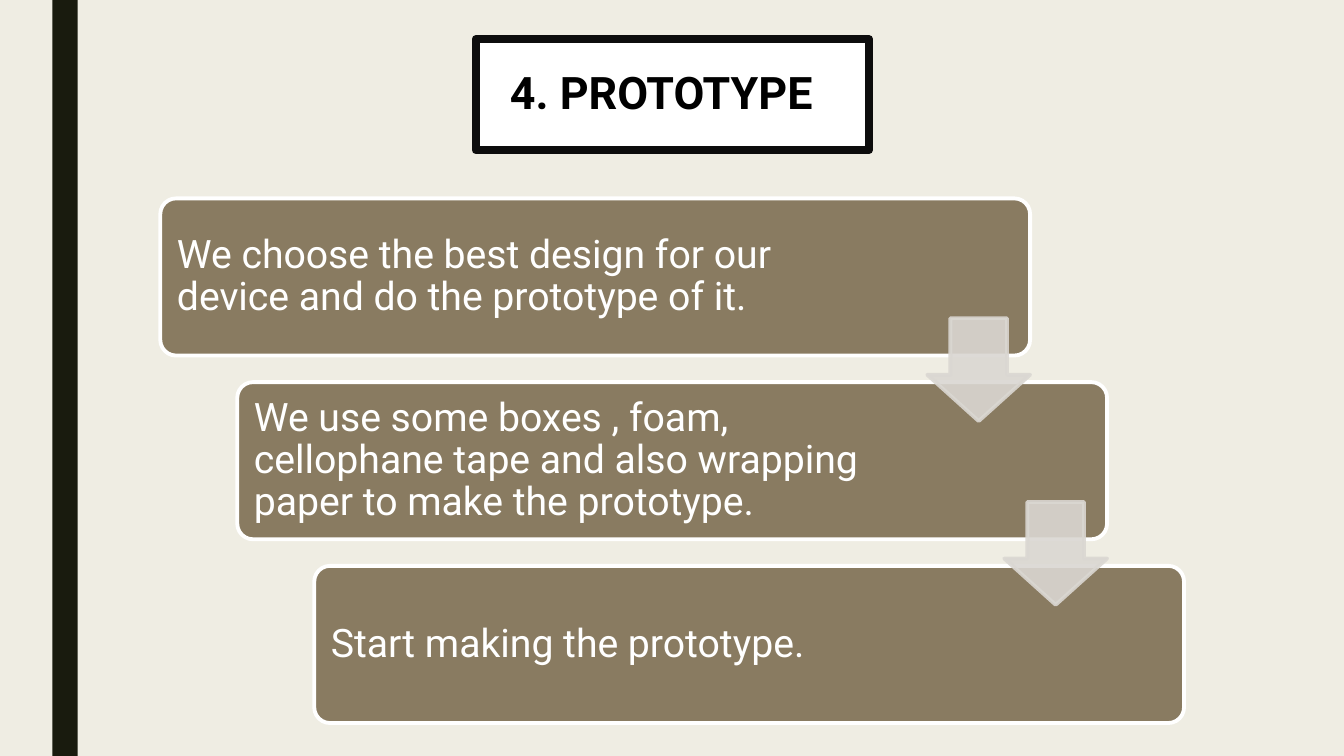
"""Build the prototype slide: a title box above three stepped boxes joined by arrows."""
from dataclasses import dataclass

from pptx import Presentation
from pptx.dml.color import RGBColor as Rgb
from pptx.enum.shapes import MSO_SHAPE as Kind
from pptx.enum.text import MSO_ANCHOR as Anchor, MSO_AUTO_SIZE as Fit, PP_ALIGN as Align
from pptx.oxml.ns import qn
from pptx.oxml.xmlchemy import OxmlElement as Element
from pptx.shapes.autoshape import Shape
from pptx.slide import Slide
from pptx.text.text import TextFrame
from pptx.util import Cm, Pt


@dataclass(frozen=True)
class Theme:
    """Colours, font and sizes of the slide."""
    paper: str = "EFEDE3"
    bar: str = "191B0E"
    ink: str = "000000"
    frame: str = "0D0D0D"
    white: str = "FFFFFF"
    box: str = "897B61"
    arrow: str = "DAD7D2"
    font: str = "Roboto"
    title: float = 32
    body: float = 28
    thick: float = 6
    thin: float = 2.75


@dataclass(frozen=True)
class Area:
    """Place and size in centimetres."""
    left: float
    top: float
    width: float
    height: float

    def shift(self, steps: int) -> "Area":
        """Move the area down the stairs."""
        return Area(self.left + steps * STEP_X, self.top + steps * STEP_Y,
                    self.width, self.height)

    def spans(self) -> tuple[Cm, Cm, Cm, Cm]:
        """Give the four lengths for a new shape."""
        return Cm(self.left), Cm(self.top), Cm(self.width), Cm(self.height)


@dataclass(frozen=True)
class Step:
    """One box of the stairs."""
    text: str
    width: float


THEME = Theme()
STEP_X, STEP_Y = 1.94, 4.63
PAGE = Area(0, 0, 33.87, 19.05)
BAR = Area(1.32, 0, 0.64, PAGE.height)
TITLE = Area(11.99, 0.99, 9.91, 2.79)
BOX = Area(4.04, 5, 21.92, 3.96)
ARROW = Area(23.37, 8.02, 2.59, 2.59)
EDGE = 0.12
PAD = 0.3
STEPS = [
    Step("We choose the best design for our device and do the prototype of it.", 17.63),
    Step("We use some boxes , foam, cellophane tape and also wrapping paper "
         "to make the prototype.", 17.17),
    Step("Start making the prototype.", 17.17),
]


def paint(shape: Shape, fill: str, line: str | None = None, width: float = 0) -> None:
    """Set the fill and the outline."""
    shape.fill.solid()
    shape.fill.fore_color.rgb = Rgb.from_string(fill)
    if line is None:
        shape.line.fill.background()
        return
    shape.line.color.rgb = Rgb.from_string(line)
    shape.line.width = Pt(width)


def draw(slide: Slide, kind: Kind, area: Area, fill: str,
         line: str | None = None, width: float = 0) -> Shape:
    """Add a flat preset shape."""
    shape = slide.shapes.add_shape(kind, *area.spans())
    shape.shadow.inherit = False
    paint(shape, fill, line, width)
    return shape


def fade(shape: Shape, percent: int) -> None:
    """Make the fill and the outline partly clear."""
    for color in shape.element.spPr.iter(qn("a:srgbClr")):
        alpha = Element("a:alpha")
        alpha.set("val", str(percent * 1000))
        color.append(alpha)


def write(frame: TextFrame, text: str, size: float, color: str,
          bold: bool, align: Align) -> None:
    """Put one paragraph in the frame."""
    frame.text = text
    frame.word_wrap = True
    frame.auto_size = Fit.NONE
    frame.vertical_anchor = Anchor.MIDDLE
    line = frame.paragraphs[0]
    line.alignment = align
    line.line_spacing = 0.9
    line.font.name = THEME.font
    line.font.size = Pt(size)
    line.font.bold = bold
    line.font.color.rgb = Rgb.from_string(color)


def head(slide: Slide) -> None:
    """Fill and place the title."""
    title = slide.shapes.title
    title.left, title.top, title.width, title.height = TITLE.spans()
    paint(title, THEME.white, THEME.frame, THEME.thick)
    write(title.text_frame, "4. PROTOTYPE", THEME.title, THEME.ink, True, Align.CENTER)
    title.text_frame.margin_right = Cm(0.81)


def stair(slide: Slide, step: Step, area: Area) -> None:
    """Draw a rounded box with its text."""
    box = draw(slide, Kind.ROUNDED_RECTANGLE, area, THEME.box, THEME.white, THEME.thin)
    box.adjustments[0] = 0.1
    inner = Area(area.left + EDGE, area.top + EDGE, step.width, area.height - 2 * EDGE)
    frame = slide.shapes.add_textbox(*inner.spans()).text_frame
    frame.margin_left = frame.margin_right = Cm(PAD)
    frame.margin_top = frame.margin_bottom = Cm(PAD)
    write(frame, step.text, THEME.body, THEME.white, False, Align.LEFT)


def point(slide: Slide, area: Area) -> None:
    """Draw a pale arrow to the next box."""
    arrow = draw(slide, Kind.DOWN_ARROW, area, THEME.arrow, THEME.arrow, THEME.thin)
    arrow.adjustments[0] = 0.55
    arrow.adjustments[1] = 0.45
    fade(arrow, 90)


def main() -> None:
    """Build and save the slide."""
    deck = Presentation()
    deck.slide_width, deck.slide_height = Cm(PAGE.width), Cm(PAGE.height)
    slide = deck.slides.add_slide(deck.slide_layouts.get_by_name("Title Only"))
    slide.background.fill.solid()
    slide.background.fill.fore_color.rgb = Rgb.from_string(THEME.paper)
    draw(slide, Kind.RECTANGLE, BAR, THEME.bar)
    head(slide)
    for rank, step in enumerate(STEPS):
        stair(slide, step, BOX.shift(rank))
    for rank in range(len(STEPS) - 1):
        point(slide, ARROW.shift(rank))
    deck.save("out.pptx")


if __name__ == "__main__":
    main()
